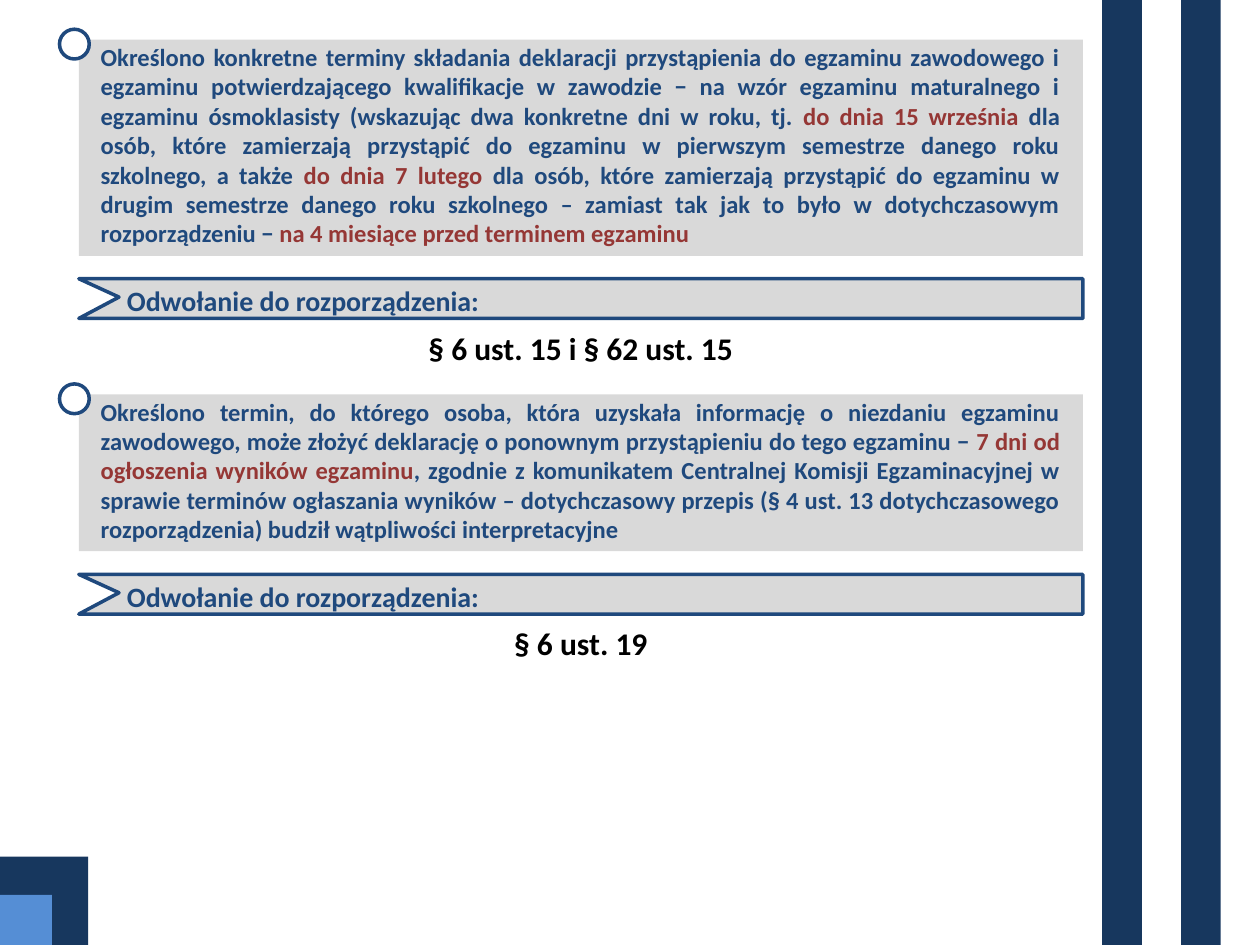
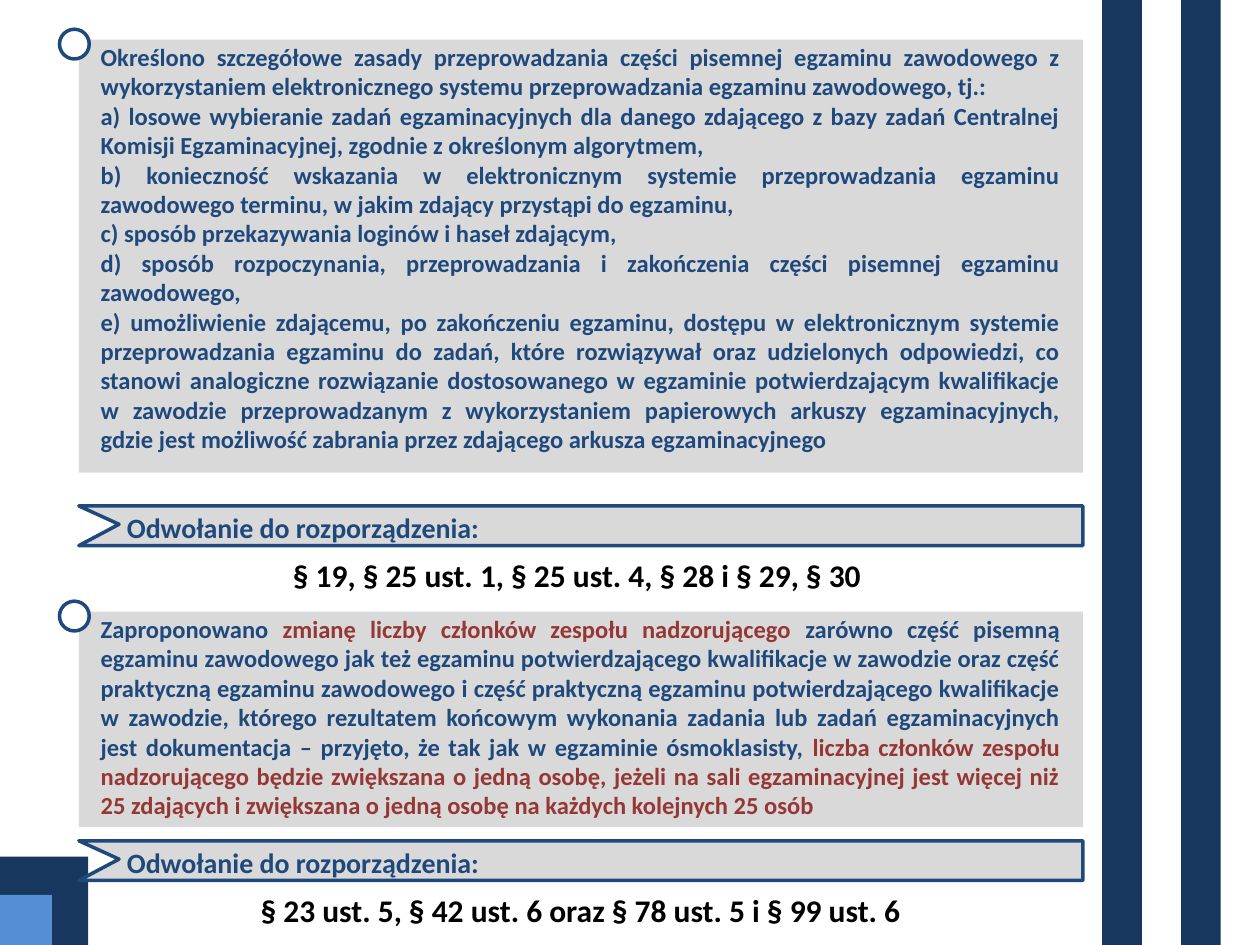
from dataclasses import dataclass

from pptx import Presentation
from pptx.dml.color import RGBColor
from pptx.enum.shapes import MSO_SHAPE
from pptx.enum.text import MSO_ANCHOR, PP_ALIGN
from pptx.util import Cm, Pt


@dataclass(frozen=True)
class Theme:
    font: str = "Calibri"
    navy: RGBColor = RGBColor(0x17, 0x37, 0x5E)
    sky: RGBColor = RGBColor(0x55, 0x8E, 0xD5)
    blue: RGBColor = RGBColor(0x1F, 0x49, 0x7D)
    red: RGBColor = RGBColor(0x95, 0x37, 0x35)
    grey: RGBColor = RGBColor(0xD9, 0xD9, 0xD9)
    white: RGBColor = RGBColor(0xFF, 0xFF, 0xFF)
    black: RGBColor = RGBColor(0, 0, 0)
    body_size: int = 14
    banner_size: int = 16
    reference_size: int = 18
    outline: int = 2


@dataclass(frozen=True)
class Box:
    """Lengths in centimetres."""
    left: float
    top: float
    width: float
    height: float

    def inner(self, left, top, width, height):
        return Box(self.left + left, self.top + top, width, height)

    def lengths(self):
        return Cm(self.left), Cm(self.top), Cm(self.width), Cm(self.height)


@dataclass(frozen=True)
class Change:
    """One amendment; in each paragraph plain and highlighted spans alternate."""
    top: float
    height: float
    banner_top: float
    paragraphs: list
    reference: str


THEME = Theme()
SLIDE_WIDTH, SLIDE_HEIGHT = 25.4, 19.05
COLUMN_LEFT, COLUMN_WIDTH = 1.59, 20.24
BANNER_HEIGHT = 0.8
BANNER_TEXT = "Odwołanie do rozporządzenia:"

SLIDES = [
    [
        Change(0.8, 4.36, 5.62, [[
            "Określono konkretne terminy składania deklaracji przystąpienia do egzaminu "
            "zawodowego i egzaminu potwierdzającego kwalifikacje w zawodzie − na wzór "
            "egzaminu maturalnego i egzaminu ósmoklasisty (wskazując dwa konkretne dni "
            "w roku, tj. ",
            "do dnia 15 września",
            " dla osób, które zamierzają przystąpić do egzaminu w pierwszym semestrze "
            "danego roku szkolnego, a także ",
            "do dnia 7 lutego ",
            "dla osób, które zamierzają przystąpić do egzaminu w drugim semestrze danego "
            "roku szkolnego – zamiast tak jak to było w dotychczasowym rozporządzeniu − ",
            "na 4 miesiące przed terminem egzaminu",
        ]], "§ 6 ust. 15 i § 62 ust. 15"),
        Change(7.95, 3.16, 11.58, [[
            "Określono termin, do którego osoba, która uzyskała informację o niezdaniu "
            "egzaminu zawodowego, może złożyć deklarację o ponownym przystąpieniu do tego "
            "egzaminu − ",
            "7 dni od ogłoszenia wyników egzaminu",
            ", zgodnie z komunikatem Centralnej Komisji Egzaminacyjnej w sprawie terminów "
            "ogłaszania wyników – dotychczasowy przepis (§ 4 ust. 13 dotychczasowego "
            "rozporządzenia) budził wątpliwości interpretacyjne",
        ]], "§ 6 ust. 19"),
    ],
    [
        Change(0.8, 8.73, 10.2, [
            ["Określono szczegółowe zasady przeprowadzania części pisemnej egzaminu "
             "zawodowego z wykorzystaniem elektronicznego systemu przeprowadzania egzaminu "
             "zawodowego, tj.:"],
            ["a) losowe wybieranie zadań egzaminacyjnych dla danego zdającego z bazy zadań "
             "Centralnej Komisji Egzaminacyjnej, zgodnie z określonym algorytmem,"],
            ["b) konieczność wskazania w elektronicznym systemie przeprowadzania egzaminu "
             "zawodowego terminu, w jakim zdający przystąpi do egzaminu,"],
            ["c) sposób przekazywania loginów i haseł zdającym,"],
            ["d) sposób rozpoczynania, przeprowadzania i zakończenia części pisemnej "
             "egzaminu zawodowego,"],
            ["e) umożliwienie zdającemu, po zakończeniu egzaminu, dostępu w elektronicznym "
             "systemie przeprowadzania egzaminu do zadań, które rozwiązywał oraz udzielonych "
             "odpowiedzi, co stanowi analogiczne rozwiązanie dostosowanego w egzaminie "
             "potwierdzającym kwalifikacje w zawodzie przeprowadzanym z wykorzystaniem "
             "papierowych arkuszy egzaminacyjnych, gdzie jest możliwość zabrania przez "
             "zdającego arkusza egzaminacyjnego"],
        ], "§ 19, § 25 ust. 1, § 25 ust. 4, § 28 i § 29, § 30 "),
        Change(12.33, 4.34, 16.95, [[
            "Zaproponowano ",
            "zmianę liczby członków zespołu nadzorującego ",
            "zarówno część pisemną egzaminu zawodowego jak też egzaminu potwierdzającego "
            "kwalifikacje w zawodzie oraz część praktyczną egzaminu zawodowego i część "
            "praktyczną egzaminu potwierdzającego kwalifikacje w zawodzie, którego "
            "rezultatem końcowym wykonania zadania lub zadań egzaminacyjnych jest "
            "dokumentacja – przyjęto, że tak jak w egzaminie ósmoklasisty, ",
            "liczba członków zespołu nadzorującego będzie zwiększana o jedną osobę, jeżeli "
            "na sali egzaminacyjnej jest więcej niż 25 zdających i zwiększana o jedną osobę "
            "na każdych kolejnych 25 osób",
        ]], "§ 23 ust. 5, § 42 ust. 6 oraz § 78 ust. 5 i § 99 ust. 6"),
    ],
]


def style_shape(shape, fill, line=None):
    shape.shadow.inherit = False
    shape.fill.solid()
    shape.fill.fore_color.rgb = fill
    if line is None:
        shape.line.fill.background()
    else:
        shape.line.color.rgb = line
        shape.line.width = Pt(THEME.outline)


def add_preset(page, box, fill, line=None, kind=MSO_SHAPE.RECTANGLE):
    style_shape(page.shapes.add_shape(kind, *box.lengths()), fill, line)


def add_span(para, text, size, color):
    span = para.add_run()
    span.text = text
    span.font.name = THEME.font
    span.font.size = Pt(size)
    span.font.bold = True
    span.font.color.rgb = color


def add_text(page, box, paragraphs, size, colors, align):
    """Write paragraphs whose spans take the given colours in turn."""
    frame = page.shapes.add_textbox(*box.lengths()).text_frame
    frame.word_wrap = True
    for number, spans in enumerate(paragraphs):
        para = frame.add_paragraph() if number else frame.paragraphs[0]
        para.alignment = align
        for position, text in enumerate(spans):
            add_span(para, text, size, colors[position % len(colors)])


def add_decoration(page, box):
    """Draw the lower left corner and the two bands at the right."""
    for size, height, color in ((1.78, 1.78, THEME.navy), (1.05, 1.01, THEME.sky)):
        add_preset(page, box.inner(0, box.height - height, size, height), color)
    for band in range(2):
        left = box.width - 3.18 + band * 1.59
        add_preset(page, box.inner(left, 0, 0.8, box.height), THEME.navy)


def add_panel(page, box, paragraphs):
    add_preset(page, box, THEME.grey)
    text_box = box.inner(0.19, -0.08, box.width - 0.4, box.height + 0.08)
    add_text(page, text_box, paragraphs, THEME.body_size,
             (THEME.blue, THEME.red), PP_ALIGN.JUSTIFY)
    add_preset(page, box.inner(-0.39, -0.21, 0.6, 0.6),
               THEME.white, THEME.blue, MSO_SHAPE.OVAL)


def add_banner(page, box):
    """Draw the notched bar that announces a reference."""
    left, top, width, height = box.lengths()
    outline = page.shapes.build_freeform(left, top)
    outline.add_line_segments([
        (left + width, top),
        (left + width, top + height),
        (left, top + height),
        (left + Cm(0.81), top + Cm(0.37)),
    ])
    banner = outline.convert_to_shape()
    style_shape(banner, THEME.grey, THEME.blue)
    frame = banner.text_frame
    frame.word_wrap = True
    frame.vertical_anchor = MSO_ANCHOR.MIDDLE
    frame.margin_left = Cm(0.97)
    frame.margin_top, frame.margin_bottom = Cm(0.08), Cm(0)
    para = frame.paragraphs[0]
    para.alignment = PP_ALIGN.LEFT
    add_span(para, BANNER_TEXT, THEME.banner_size, THEME.blue)


def add_change(page, change):
    add_panel(page, Box(COLUMN_LEFT, change.top, COLUMN_WIDTH, change.height),
              change.paragraphs)
    banner_box = Box(COLUMN_LEFT, change.banner_top, COLUMN_WIDTH, BANNER_HEIGHT)
    add_banner(page, banner_box)
    reference_box = banner_box.inner(-0.6, 0.88, COLUMN_WIDTH + 1.2, 1.02)
    add_text(page, reference_box, [[change.reference]], THEME.reference_size,
             (THEME.black,), PP_ALIGN.CENTER)


def main():
    deck = Presentation()
    deck.slide_width, deck.slide_height = Cm(SLIDE_WIDTH), Cm(SLIDE_HEIGHT)
    for changes in SLIDES:
        page = deck.slides.add_slide(deck.slide_layouts[6])
        add_decoration(page, Box(0, 0, SLIDE_WIDTH, SLIDE_HEIGHT))
        for change in changes:
            add_change(page, change)
    deck.save("out.pptx")


if __name__ == "__main__":
    main()
